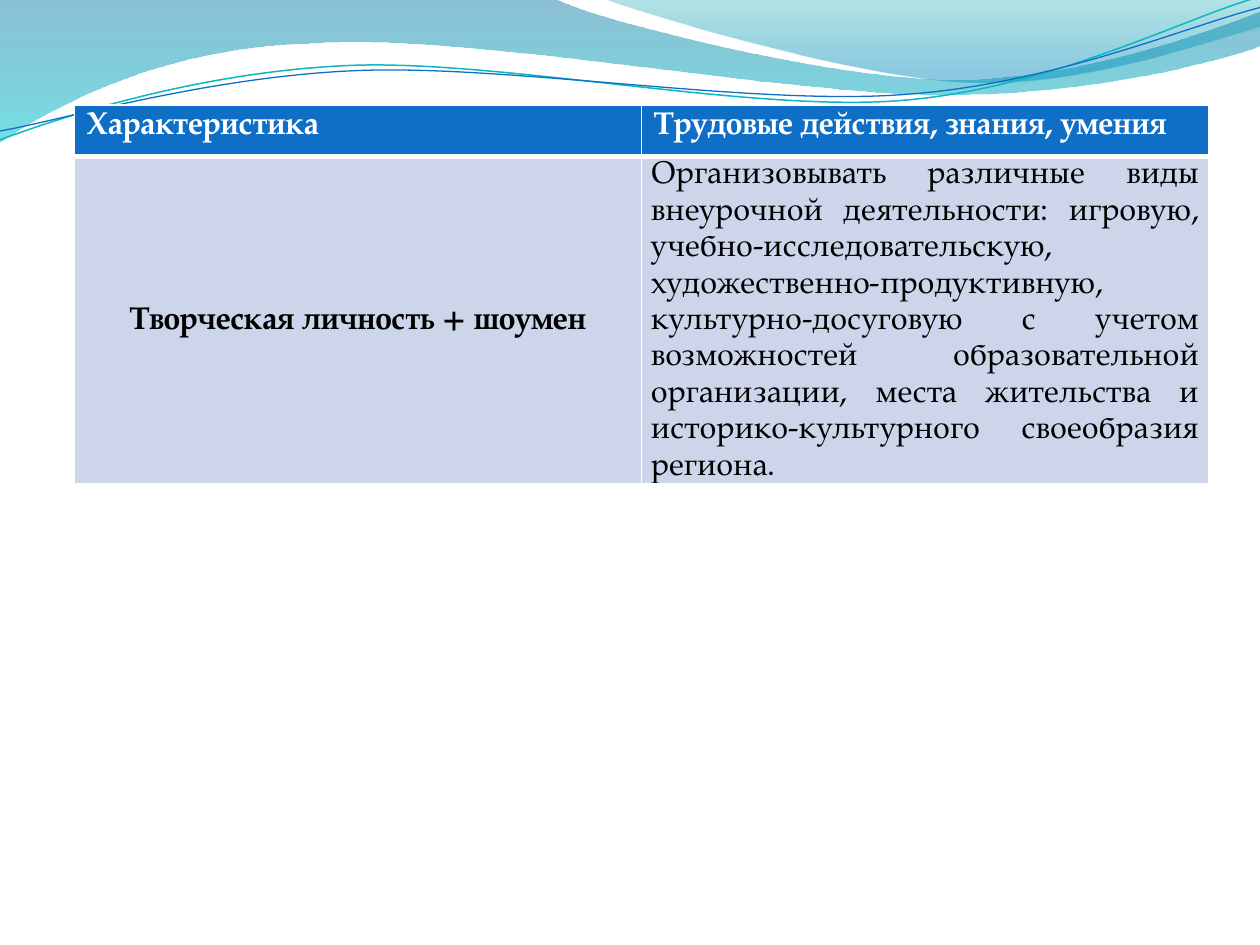
from lxml import etree
from pptx import Presentation
from pptx.dml.color import RGBColor
from pptx.enum.text import MSO_ANCHOR, PP_ALIGN
from pptx.oxml.ns import qn
from pptx.util import Pt

CENTER, JUSTIFY, LEFT = PP_ALIGN.CENTER, PP_ALIGN.JUSTIFY, PP_ALIGN.LEFT
TOP, MIDDLE = MSO_ANCHOR.TOP, MSO_ANCHOR.MIDDLE
FONT = "TeX Gyre Pagella"
COLORS = {
    "white": "FFFFFF", "black": "000000", "header": "0F6FC6", "body": "CCD5EA",
    "deep": "0074A1", "cyan": "00C6CF", "teal": "00A1A9", "blue": "008BBF",
    "teal_line": "0AB8BF", "blue_line": "0F6FC6",
}
CURVE_TILT = 357.3

# Outlines in points: a pair is a corner, six numbers are a Bezier curve.
LEFT_WAVE = [
    (0, 0), (316.8, -0.72),
    (342.72, 12.24, 478.08, 45.36, 545.76, 45.36),
    (614.16, 45.36, 689.76, 18.72, 720, 6.48), (720.72, 25.92),
    (707.76, 31.68, 626.4, 54.72, 537.12, 54),
    (447.84, 54, 275.04, 20.16, 185.04, 24.48),
    (92.88, 25.92, 33.12, 59.76, -0.72, 81.36), (0, 0),
]
RIGHT_WAVE = [
    (344.88, -0.72),
    (366.48, 7.92, 491.04, 44.64, 553.68, 46.8),
    (616.32, 49.68, 691.92, 23.04, 720, 15.12), (720, 0), (344.88, -0.72),
]
TEAL_CURVE = [
    (-1.4, 63),
    (33.7, 51.6, 114.1, 29.5, 199.8, 29.9),
    (284.8, 30.3, 425.8, 67.2, 512.4, 64.8),
    (599, 62.4, 676.5, 25.7, 720.2, 15.5),
]
BLUE_CURVE = [
    (-1.1, 57.9),
    (32.9, 53.7, 118.3, 32.5, 204, 33),
    (290.5, 33.5, 428.9, 63.8, 515.5, 61.4),
    (601.4, 59.6, 678.5, 30.1, 721.4, 21.3),
]

HEADERS = ["Характеристика", "Трудовые действия, знания, умения"]
TRAIT = "Творческая личность + шоумен"
SKILLS = (
    "Организовывать различные виды внеурочной деятельности: игровую, "
    "учебно-исследовательскую, художественно-продуктивную, "
    "культурно-досуговую с учетом возможностей образовательной организации, "
    "места жительства и историко-культурного своеобразия региона."
)


def rgb(name):
    return RGBColor.from_string(COLORS[name])


def add_outline(slide, outline, close):
    """Build a freeform, then join the three points of each curve into one Bezier."""
    points = [(Pt(part[i]), Pt(part[i + 1]))
              for part in outline for i in range(0, len(part), 2)]
    builder = slide.shapes.build_freeform(*points[0])
    builder.add_line_segments(points[1:], close=close)
    s = builder.convert_to_shape()
    s.shadow.inherit = False
    segments = iter(list(s._element.iter(qn("a:lnTo"))))
    for part in outline[1:]:
        segment = next(segments)
        if len(part) == 6:
            segment.tag = qn("a:cubicBezTo")
            for extra in (next(segments), next(segments)):
                segment.append(extra[0])
                extra.getparent().remove(extra)
    return s


def add_wave(slide, outline, stops):
    """Add a vertical gradient shape; stops are (position, colour, opacity %)."""
    s = add_outline(slide, outline, close=True)
    s.line.fill.background()
    s.fill.gradient()
    s.fill.gradient_angle = 270
    for stop, (position, color, _) in zip(s.fill.gradient_stops, stops):
        stop.position = position
        stop.color.rgb = rgb(color)
    gradient = s._element.spPr.find(qn("a:gradFill"))
    for clr, (_, _, opacity) in zip(gradient.iter(qn("a:srgbClr")), stops):
        etree.SubElement(clr, qn("a:alpha"), val=str(opacity * 1000))


def add_curve(slide, outline, color, width):
    s = add_outline(slide, outline, close=False)
    s.rotation = CURVE_TILT
    s.fill.background()
    s.line.color.rgb = rgb(color)
    s.line.width = Pt(width)


def set_borders(cell, top, bottom):
    """Draw white borders, 1 pt at the sides; they must precede the cell fill."""
    tc_pr = cell._tc.get_or_add_tcPr()
    widths = {"a:lnL": 1, "a:lnR": 1, "a:lnT": top, "a:lnB": bottom}
    for i, (tag, width) in enumerate(widths.items()):
        ln = etree.Element(qn(tag), w=str(Pt(width)))
        fill = etree.SubElement(ln, qn("a:solidFill"))
        etree.SubElement(fill, qn("a:srgbClr"), val=COLORS["white"])
        tc_pr.insert(i, ln)


def fill_cell(cell, text, fill, color, bold=True, align=LEFT, anchor=TOP):
    cell.fill.solid()
    cell.fill.fore_color.rgb = rgb(fill)
    cell.vertical_anchor = anchor
    p = cell.text_frame.paragraphs[0]
    p.alignment = align
    r = p.add_run()
    r.text = text
    r.font.name = FONT
    r.font.size = Pt(18)
    r.font.bold = bold
    r.font.color.rgb = rgb(color)


def add_skills_table(slide):
    frame = slide.shapes.add_table(2, 2, Pt(42.5), Pt(60.1), Pt(648), Pt(59))
    table = frame.table
    for row in table.rows:
        row.height = Pt(29.2)
    frame.height = Pt(274.3)
    for col, text in enumerate(HEADERS):
        cell = table.cell(0, col)
        fill_cell(cell, text, "header", "white")
        set_borders(cell, top=1, bottom=3)

    trait, skills = table.cell(1, 0), table.cell(1, 1)
    fill_cell(trait, TRAIT, "body", "black", align=CENTER, anchor=MIDDLE)
    fill_cell(skills, SKILLS, "body", "black", bold=False, align=JUSTIFY)
    for cell in (trait, skills):
        cell.margin_left = cell.margin_right = Pt(5.4)
        cell.margin_top = cell.margin_bottom = 0
        cell.text_frame.paragraphs[0].line_spacing = 1.15
        set_borders(cell, top=3, bottom=1)


def main():
    prs = Presentation()
    prs.slide_width, prs.slide_height = Pt(720), Pt(540)
    slide = prs.slides.add_slide(prs.slide_layouts[6])
    add_wave(slide, LEFT_WAVE, [(0, "deep", 45), (1, "cyan", 55)])
    add_wave(slide, RIGHT_WAVE, [(0, "teal", 30), (0.8, "blue", 45)])
    add_curve(slide, TEAL_CURVE, "teal_line", 0.85)
    add_curve(slide, BLUE_CURVE, "blue_line", 0.75)
    add_skills_table(slide)
    prs.save("out.pptx")


if __name__ == "__main__":
    main()
